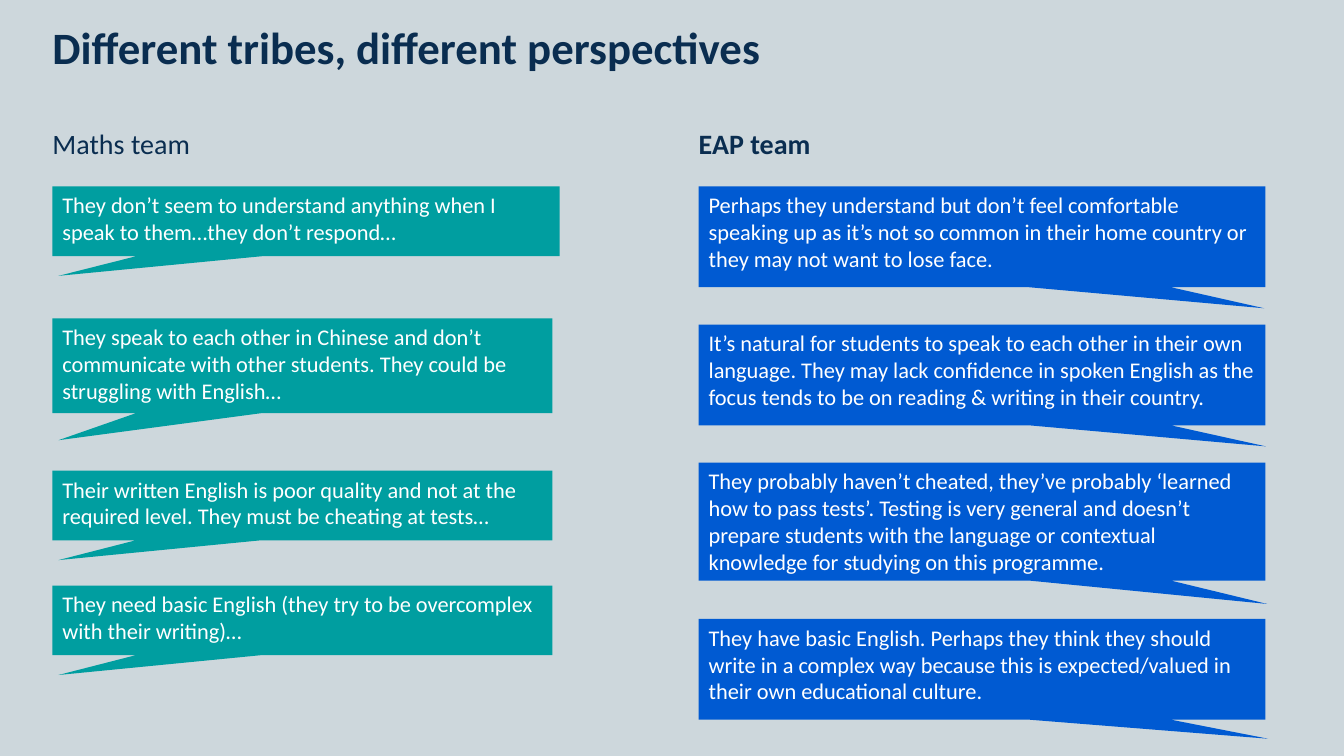
from dataclasses import dataclass

from lxml.etree import SubElement
from pptx import Presentation
from pptx.dml.color import RGBColor
from pptx.enum.shapes import MSO_SHAPE as Shape
from pptx.enum.text import MSO_ANCHOR as Anchor, MSO_AUTO_SIZE as AutoSize, PP_ALIGN as Align
from pptx.oxml.ns import qn
from pptx.util import Inches, Pt


@dataclass(frozen=True)
class Theme:
    font: str = "Calibri"
    background: str = "CDD7DC"
    navy: str = "0A2D50"
    teal: str = "009EA0"
    blue: str = "005AD2"
    white: str = "FFFFFF"
    title_size: int = 32
    heading_size: int = 20
    quote_size: int = 16


THEME = Theme()
TWO_CONTENT = 3
MARGIN, EAP_LEFT = 0.52, 6.93
COLUMN_TOP, COLUMN_WIDTH, COLUMN_HEIGHT = 1.19, 5.88, 5.32
MATHS_TAIL = (-0.488, 0.785)

# Each quote: top, width, height, tail position, wording
MATHS_QUOTES = [
    (1.85, 5.03, 0.69, MATHS_TAIL,
     "They don’t seem to understand anything when I speak to them…they don’t respond…"),
    (3.16, 4.96, 0.94, MATHS_TAIL,
     "They speak to each other in Chinese and don’t communicate with other students. "
     "They could be struggling with English…"),
    (4.67, 4.96, 0.69, MATHS_TAIL,
     "Their written English is poor quality and not at the required level. "
     "They must be cheating at tests…"),
    (5.81, 4.96, 0.69, MATHS_TAIL,
     "They need basic English (they try to be overcomplex with their writing)…"),
]
EAP_QUOTES = [
    (1.85, 5.62, 1, (0.498, 0.709),
     "Perhaps they understand but don’t feel comfortable speaking up as it’s not so common "
     "in their home country or they may not want to lose face."),
    (3.22, 5.62, 1, (0.501, 0.709),
     "It’s natural for students to speak to each other in their own language. They may lack "
     "confidence in spoken English as the focus tends to be on reading & writing in their country."),
    (4.59, 5.62, 1.17, (0.503, 0.698),
     "They probably haven’t cheated, they’ve probably ‘learned how to pass tests’. Testing is very "
     "general and doesn’t prepare students with the language or contextual knowledge for "
     "studying on this programme."),
    (6.14, 5.62, 1, (0.505, 0.689),
     "They have basic English. Perhaps they think they should write in a complex way because "
     "this is expected/valued in their own educational culture."),
]


def write(shape, text, *, size, color, bold=False, spacing=1.0, inset=None):
    """Fill a shape with one left-aligned, top-anchored paragraph."""
    frame = shape.text_frame
    frame.word_wrap = True
    frame.auto_size = AutoSize.NONE
    frame.vertical_anchor = Anchor.TOP
    if inset is not None:
        frame.margin_left = frame.margin_right = Inches(inset)
        frame.margin_top = frame.margin_bottom = Inches(inset)
    paragraph = frame.paragraphs[0]
    paragraph.alignment = Align.LEFT
    paragraph.line_spacing = spacing
    paragraph.space_before = Pt(0)
    run = paragraph.add_run()
    run.text = text
    run.font.name = THEME.font
    run.font.size = Pt(size)
    run.font.bold = bold
    run.font.color.rgb = RGBColor.from_string(color)
    return paragraph


def place(shape, left, top, width, height):
    shape.left, shape.top = Inches(left), Inches(top)
    shape.width, shape.height = Inches(width), Inches(height)


def add_title(title, text, box):
    place(title, *box)
    write(title, text, size=THEME.title_size, color=THEME.navy, bold=True, inset=0)


def add_quote(slide, text, box, color, tail):
    quote = slide.shapes.add_shape(Shape.RECTANGULAR_CALLOUT, *map(Inches, box))
    quote.adjustments[0], quote.adjustments[1] = tail
    quote.shadow.inherit = False
    quote.fill.solid()
    quote.fill.fore_color.rgb = RGBColor.from_string(color)
    quote.line.fill.background()
    write(quote, text, size=THEME.quote_size, color=THEME.white)


def add_team(slide, heading, text, quotes, box, color, bold=False):
    """Place a team's heading and its quotes, aligned to the left of the box."""
    place(heading, *box)
    paragraph = write(heading, text, size=THEME.heading_size, color=THEME.navy,
                      bold=bold, spacing=1.2, inset=0)
    properties = paragraph._p.get_or_add_pPr()
    properties.set("marL", "0")
    properties.set("indent", "0")
    SubElement(properties, qn("a:buNone"))
    left, column_top = box[:2]
    for top, width, height, tail, wording in quotes:
        offset = top - COLUMN_TOP
        add_quote(slide, wording, (left, column_top + offset, width, height), color, tail)


def main():
    deck = Presentation()
    deck.slide_width, deck.slide_height = Inches(13.33), Inches(7.5)
    slide = deck.slides.add_slide(deck.slide_layouts[TWO_CONTENT])
    slide.background.fill.solid()
    slide.background.fill.fore_color.rgb = RGBColor.from_string(THEME.background)

    title, maths, eap = slide.placeholders
    add_title(title, "Different tribes, different perspectives", (MARGIN, 0.2, 12.28, 0.79))
    column = (COLUMN_TOP, COLUMN_WIDTH, COLUMN_HEIGHT)
    add_team(slide, maths, "Maths team", MATHS_QUOTES, (MARGIN, *column), THEME.teal)
    add_team(slide, eap, "EAP team", EAP_QUOTES, (EAP_LEFT, *column), THEME.blue, bold=True)
    deck.save("out.pptx")


if __name__ == "__main__":
    main()
